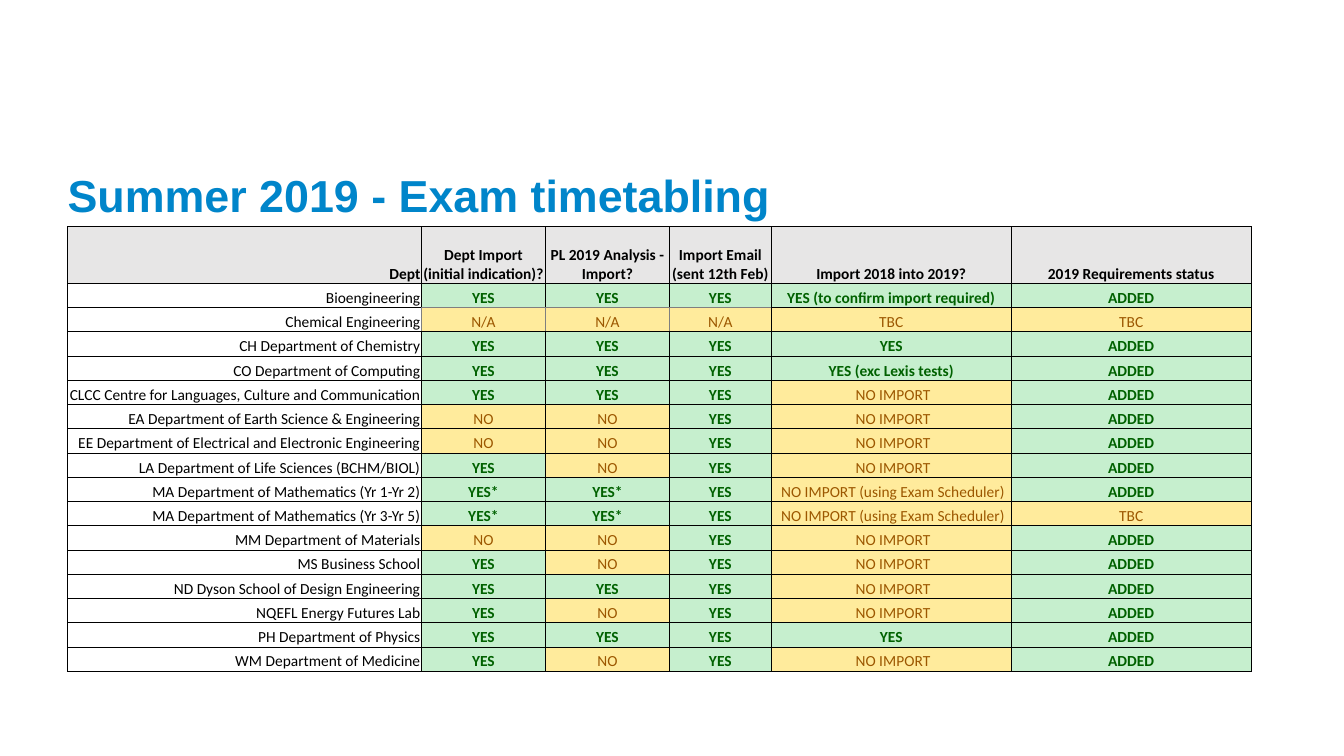
from dataclasses import dataclass

from lxml.etree import SubElement
from pptx import Presentation
from pptx.dml.color import RGBColor
from pptx.enum.text import MSO_ANCHOR, PP_ALIGN
from pptx.oxml.ns import qn
from pptx.slide import Slide
from pptx.table import _Cell
from pptx.text.text import _Paragraph
from pptx.util import Inches, Pt


@dataclass(frozen=True)
class CellStyle:
    color: str
    fill: str | None
    bold: bool
    align: PP_ALIGN = PP_ALIGN.CENTER


BLACK = "000000"
GREY = "7F7F7F"
HEADER = CellStyle(BLACK, "E7E6E6", True)
HEADER_DEPARTMENT = CellStyle(BLACK, "E7E6E6", True, PP_ALIGN.RIGHT)
DEPARTMENT = CellStyle(BLACK, None, False, PP_ALIGN.RIGHT)
CONFIRMED = CellStyle("006100", "C6EFCE", True)
PENDING = CellStyle("9C5700", "FFEB9C", False)

TABLE_LEFT, TABLE_TOP = 0.67, 2.25
TABLE_HEIGHT, HEADER_HEIGHT = 4.41, 0.56
COLUMN_WIDTHS = [3.51, 1.23, 1.23, 1.01, 2.38, 2.38]
NO_IMPORT = " NO IMPORT"
SCHEDULER = " NO IMPORT (using Exam Scheduler)"

ROWS = [
    ("Dept", "Dept Import (initial indication)?", "PL 2019 Analysis - Import?",
     "Import Email (sent 12th Feb)", "Import 2018 into 2019?", "2019 Requirements status"),
    ("Bioengineering", "YES", "YES", "YES", "YES (to confirm import required)", "ADDED"),
    ("Chemical Engineering", "N/A", "N/A", "N/A", "TBC", "TBC"),
    ("CH Department of Chemistry", "YES", "YES", "YES", "YES", "ADDED"),
    ("CO Department of Computing", "YES", "YES", "YES", "YES (exc Lexis tests)", "ADDED"),
    ("CLCC Centre for Languages, Culture and Communication",
     "YES", "YES", "YES", NO_IMPORT, "ADDED"),
    ("EA Department of Earth Science & Engineering", "NO", "NO", "YES", NO_IMPORT, "ADDED"),
    ("EE Department of Electrical and Electronic Engineering",
     "NO", "NO", "YES", NO_IMPORT, "ADDED"),
    ("LA Department of Life Sciences (BCHM/BIOL)", "YES", "NO", "YES", NO_IMPORT, "ADDED"),
    ("MA Department of Mathematics (Yr 1-Yr 2)", "YES*", "YES*", "YES", SCHEDULER, "ADDED"),
    ("MA Department of Mathematics (Yr 3-Yr 5)", "YES*", "YES*", "YES", SCHEDULER, "TBC"),
    ("MM Department of Materials", "NO", "NO", "YES", NO_IMPORT, "ADDED"),
    ("MS Business School", "YES", "NO", "YES", NO_IMPORT, "ADDED"),
    ("ND Dyson School of Design Engineering", "YES", "YES", "YES", NO_IMPORT, "ADDED"),
    ("NQEFL Energy Futures Lab", "YES", "NO", "YES", NO_IMPORT, "ADDED"),
    ("PH Department of Physics", "YES", "YES", "YES", "YES", "ADDED"),
    ("WM Department of Medicine", "YES", "NO", "YES", NO_IMPORT, "ADDED"),
]


def rgb(value: str) -> RGBColor:
    return RGBColor.from_string(value)


def set_font(paragraph: _Paragraph, name: str, size: float, color: str, bold: bool) -> None:
    font = paragraph.font
    font.name = name
    font.size = Pt(size)
    font.bold = bold
    font.color.rgb = rgb(color)


def style_for(row: int, column: int) -> CellStyle:
    if row == 0:
        return HEADER if column else HEADER_DEPARTMENT
    if column == 0:
        return DEPARTMENT
    return CONFIRMED if ROWS[row][column].startswith(("YES", "ADDED")) else PENDING


def edge_color(row: int, column: int) -> str:
    inside = row < len(ROWS) and column < len(COLUMN_WIDTHS)
    return GREY if inside and ROWS[row][column] == "N/A" else BLACK


def add_borders(cell: _Cell, row: int, column: int) -> None:
    edges = {
        "a:lnL": edge_color(row, column),
        "a:lnR": edge_color(row, column + 1),
        "a:lnT": edge_color(row, column),
        "a:lnB": edge_color(row + 1, column),
    }
    properties = cell._tc.get_or_add_tcPr()
    for tag, color in edges.items():
        line = SubElement(properties, qn(tag), w=str(Pt(0.5)))
        solid = SubElement(line, qn("a:solidFill"))
        SubElement(solid, qn("a:srgbClr"), val=color)


def fill_cell(cell: _Cell, row: int, column: int) -> None:
    style = style_for(row, column)
    add_borders(cell, row, column)
    if style.fill:
        cell.fill.solid()
        cell.fill.fore_color.rgb = rgb(style.fill)
    else:
        cell.fill.background()
    cell.margin_left = cell.margin_right = cell.margin_top = Inches(0.01)
    cell.margin_bottom = 0
    cell.vertical_anchor = MSO_ANCHOR.BOTTOM
    cell.text = ROWS[row][column]
    paragraph = cell.text_frame.paragraphs[0]
    paragraph.alignment = style.align
    set_font(paragraph, "Calibri", 11, style.color, style.bold)


def add_title(slide: Slide) -> None:
    title = slide.shapes.add_textbox(Inches(0.67), Inches(1.63), Inches(12), Inches(0.56))
    frame = title.text_frame
    frame.word_wrap = True
    frame.vertical_anchor = MSO_ANCHOR.MIDDLE
    frame.margin_left = frame.margin_right = frame.margin_bottom = 0
    frame.margin_top = Inches(0.05)
    frame.text = "Summer 2019 - Exam timetabling"
    set_font(frame.paragraphs[0], "Arial", 32, "0085CA", True)


def add_status_table(slide: Slide) -> None:
    table = slide.shapes.add_table(
        len(ROWS), len(COLUMN_WIDTHS), Inches(TABLE_LEFT), Inches(TABLE_TOP),
        Inches(sum(COLUMN_WIDTHS)), Inches(TABLE_HEIGHT),
    ).table
    table.first_row = table.horz_banding = False
    for column, width in zip(table.columns, COLUMN_WIDTHS):
        column.width = Inches(width)
    body_height = (TABLE_HEIGHT - HEADER_HEIGHT) / (len(ROWS) - 1)
    for row, table_row in enumerate(table.rows):
        table_row.height = Inches(body_height if row else HEADER_HEIGHT)
        for column, cell in enumerate(table_row.cells):
            fill_cell(cell, row, column)


def main() -> None:
    presentation = Presentation()
    presentation.slide_width = Inches(13.33)
    presentation.slide_height = Inches(7.5)
    slide = presentation.slides.add_slide(presentation.slide_layouts[6])
    add_title(slide)
    add_status_table(slide)
    presentation.save("out.pptx")


if __name__ == "__main__":
    main()
